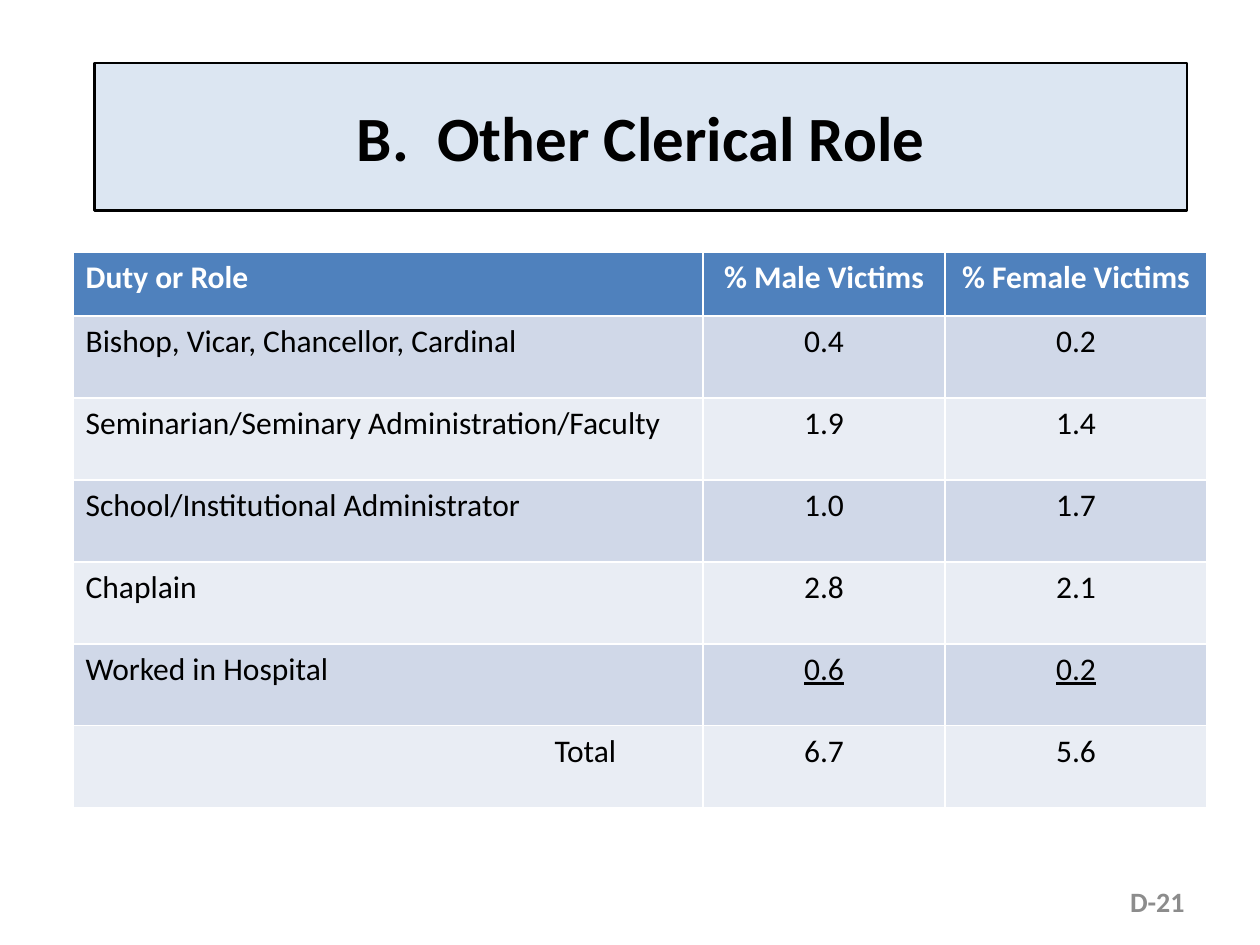
"""Build the slide on other clerical roles, with a table of victim percentages."""
from pptx import Presentation
from pptx.dml.color import RGBColor
from pptx.enum.text import MSO_ANCHOR, PP_ALIGN
from pptx.util import Inches, Pt


def rgb(code):
    return RGBColor.from_string(code)


def style(p, size, color, bold, align):
    p.font.name = "Calibri"
    p.font.size = Pt(size)
    p.font.color.rgb = rgb(color)
    p.font.bold = bold
    p.alignment = align


rows = [
    ("Duty or Role", "% Male Victims", "% Female Victims"),
    ("Bishop, Vicar, Chancellor, Cardinal", "0.4", "0.2"),
    ("Seminarian/Seminary Administration/Faculty", "1.9", "1.4"),
    ("School/Institutional Administrator", "1.0", "1.7"),
    ("Chaplain", "2.8", "2.1"),
    ("Worked in Hospital", "0.6", "0.2"),
    ("Total", "6.7", "5.6"),
]
widths = [5, 1.92, 2.08]
last = len(rows) - 1

prs = Presentation()
prs.slide_width, prs.slide_height = Inches(10), Inches(7.5)
s = prs.slides.add_slide(prs.slide_layouts[5])

title = s.shapes.title
title.left, title.top = Inches(0.75), Inches(0.5)
title.width, title.height = Inches(8.67), Inches(1.17)
title.fill.solid()
title.fill.fore_color.rgb = rgb("DCE6F2")
title.line.color.rgb = rgb("000000")
title.line.width = Pt(1.5)
tf = title.text_frame
tf.text = "B.  Other Clerical Role"
tf.vertical_anchor = MSO_ANCHOR.MIDDLE
style(tf.paragraphs[0], 36, "000000", True, PP_ALIGN.CENTER)

table = s.shapes.add_table(len(rows), len(widths), Inches(0.58), Inches(2),
                           Inches(9), Inches(4.42)).table
for col, width in zip(table.columns, widths):
    col.width = Inches(width)
for i, values in enumerate(rows):
    header = i == 0
    table.rows[i].height = Inches(0.51 if header else 0.65)
    fill = "4F81BD" if header else ("E9EDF4", "D0D8E8")[i % 2]
    for j, value in enumerate(values):
        cell = table.cell(i, j)
        cell.fill.solid()
        cell.fill.fore_color.rgb = rgb(fill)
        cell.text = value
        p = cell.text_frame.paragraphs[0]
        style(p, 18, "FFFFFF" if header else "000000", header,
              PP_ALIGN.CENTER if j else PP_ALIGN.LEFT)
        if j and i == last - 1:
            p.font.underline = True

total = table.cell(last, 0)
total.margin_right = Inches(0.69)
total.text_frame.paragraphs[0].alignment = PP_ALIGN.RIGHT

tf = s.shapes.add_textbox(Inches(7.17), Inches(6.95), Inches(2.33), Inches(0.4)).text_frame
tf.word_wrap = True
tf.vertical_anchor = MSO_ANCHOR.MIDDLE
tf.text = "D-21"
style(tf.paragraphs[0], 16, "8C8C8C", True, PP_ALIGN.RIGHT)

prs.save("out.pptx")
